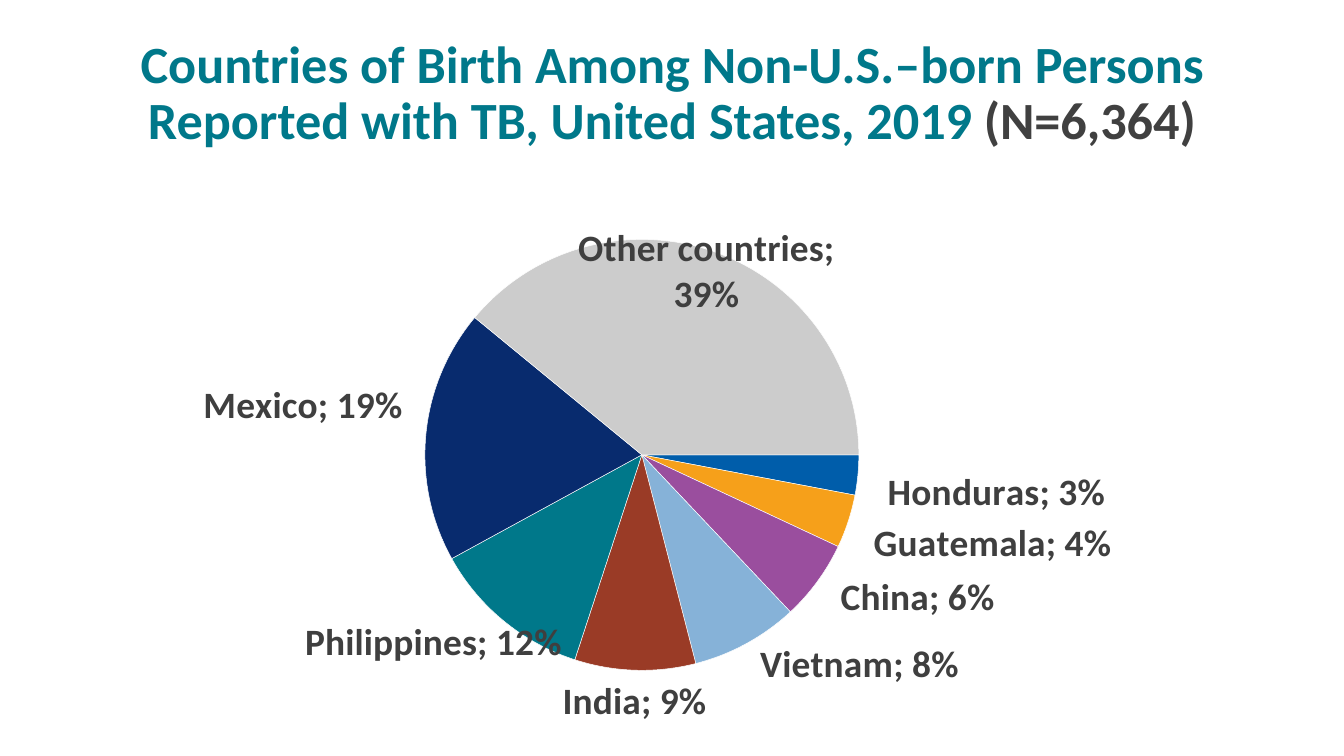
import copy

import lxml.etree
import pptx
import pptx.chart.data
import pptx.dml.color
import pptx.enum.chart
import pptx.enum.text
import pptx.oxml
import pptx.oxml.ns
import pptx.util

RGB = pptx.dml.color.RGBColor
qn = pptx.oxml.ns.qn

# Content
FONT = "Calibri"
TEAL = RGB(0x00, 0x78, 0x8A)
DARK = RGB(0x40, 0x40, 0x40)
LABEL = RGB(0x3F, 0x3F, 0x3F)
WHITE = RGB(0xFF, 0xFF, 0xFF)

TITLE = [
    ("Countries of Birth Among Non-U.S.–born Persons Reported with TB, "
     "United States, 2019 ", TEAL),
    ("(N=6,364)", DARK),
]
# Country, share, slice colour, label shift in px
SLICES = [
    ("Honduras", 0.03, RGB(0x00, 0x5D, 0xAA), (22, -7)),
    ("Guatemala", 0.04, RGB(0xF6, 0xA0, 0x1A), (18, -3)),
    ("China", 0.06, RGB(0x9A, 0x4E, 0x9E), (17, -12)),
    ("Vietnam", 0.08, RGB(0x86, 0xB2, 0xD8), (10, -9)),
    ("India", 0.09, RGB(0x9A, 0x3B, 0x26), None),
    ("Philippines", 0.12, TEAL, (64, -8)),
    ("Mexico", 0.19, RGB(0x08, 0x2B, 0x6E), (-15, -6)),
    ("Other countries", 0.39, RGB(0xCC, 0xCC, 0xCC), (-140, 73)),
]

# Geometry in px; the pie leaves room for one-line labels on its right
SCALE = 914400 / 134.4
TITLE_BOX = (67, 31, 1210, 126)
CHART_BOX = (-164, 153, 1310, 573)
PIE_CENTRE = (642, 453)
PIE_SIZE = 434


def emu(px):
    return pptx.util.Emu(round(px * SCALE))


def make_layout(x, y, size=None):
    """Manual layout from px, as fractions of the chart frame."""
    w, h = CHART_BOX[2:]
    values = [("x", x / w), ("y", y / h)]
    if size:
        values = ([("layoutTarget", "inner"), ("xMode", "edge"), ("yMode", "edge")]
                  + values + [("w", size / w), ("h", size / h)])
    layout = pptx.oxml.parse_xml(
        '<c:layout xmlns:c="http://schemas.openxmlformats.org/drawingml/2006/chart"/>')
    manual = lxml.etree.SubElement(layout, qn("c:manualLayout"))
    for tag, value in values:
        text = value if isinstance(value, str) else f"{value:.4f}"
        lxml.etree.SubElement(manual, qn("c:" + tag)).set("val", text)
    return layout


prs = pptx.Presentation()
prs.slide_width, prs.slide_height = emu(1344), emu(756)
s = prs.slides.add_slide(prs.slide_layouts[5])

# Title
title = s.shapes.title
title.left, title.top, title.width, title.height = map(emu, TITLE_BOX)
tf = title.text_frame
tf.word_wrap = True
tf.auto_size = pptx.enum.text.MSO_AUTO_SIZE.NONE
tf.vertical_anchor = pptx.enum.text.MSO_ANCHOR.BOTTOM
p = tf.paragraphs[0]
p.alignment = pptx.enum.text.PP_ALIGN.CENTER
p.line_spacing = pptx.util.Pt(30)
for text, color in TITLE:
    r = p.add_run()
    r.text = text
    r.font.name, r.font.size, r.font.bold = FONT, pptx.util.Pt(28), True
    r.font.color.rgb = color

# Pie chart
data = pptx.chart.data.CategoryChartData(number_format="0%")
data.categories = [name for name, *_ in SLICES]
data.add_series("Series 1", [share for _, share, *_ in SLICES])
chart = s.shapes.add_chart(
    pptx.enum.chart.XL_CHART_TYPE.PIE, *map(emu, CHART_BOX), data).chart
chart.has_legend = False
chart.has_title = False
chart.font.name, chart.font.size = FONT, pptx.util.Pt(10)
plot = chart.plots[0]
plot.vary_by_categories = True
series = plot.series[0]

# First slice starts at three o'clock
pie = series._element.getparent()
angle = pie.find(qn("c:firstSliceAng"))
if angle is None:
    angle = lxml.etree.SubElement(pie, qn("c:firstSliceAng"))
angle.set("val", "90")

# Pie position inside the frame
area = pie.getparent()
for old in area.findall(qn("c:layout")):
    area.remove(old)
left, top = (c - PIE_SIZE / 2 - o for c, o in zip(PIE_CENTRE, CHART_BOX))
area.insert(0, make_layout(left, top, PIE_SIZE))

# Labels shared by all slices
labels = series.data_labels
labels.show_value = labels.show_category_name = True
labels.show_percentage = False
labels.number_format, labels.number_format_is_linked = "0%", False
labels.position = pptx.enum.chart.XL_LABEL_POSITION.OUTSIDE_END
labels.font.name, labels.font.size, labels.font.bold = FONT, pptx.util.Pt(20), True
labels.font.color.rgb = LABEL
group = labels._element
for old in group.findall(qn("c:showLeaderLines")):
    group.remove(old)
lxml.etree.SubElement(group, qn("c:separator")).text = "; "
shared = list(group)
lxml.etree.SubElement(group, qn("c:showLeaderLines")).set("val", "0")

# Slice colours and shifted labels
position = 0
for i, (_, _, color, shift) in enumerate(SLICES):
    fmt = series.points[i].format
    fmt.fill.solid()
    fmt.fill.fore_color.rgb = color
    fmt.line.color.rgb = WHITE
    fmt.line.width = pptx.util.Pt(0.25)
    if shift:
        label = lxml.etree.Element(qn("c:dLbl"))
        lxml.etree.SubElement(label, qn("c:idx")).set("val", str(i))
        label.append(make_layout(*shift))
        label.extend(copy.deepcopy(part) for part in shared)
        group.insert(position, label)
        position += 1

prs.save("out.pptx")
